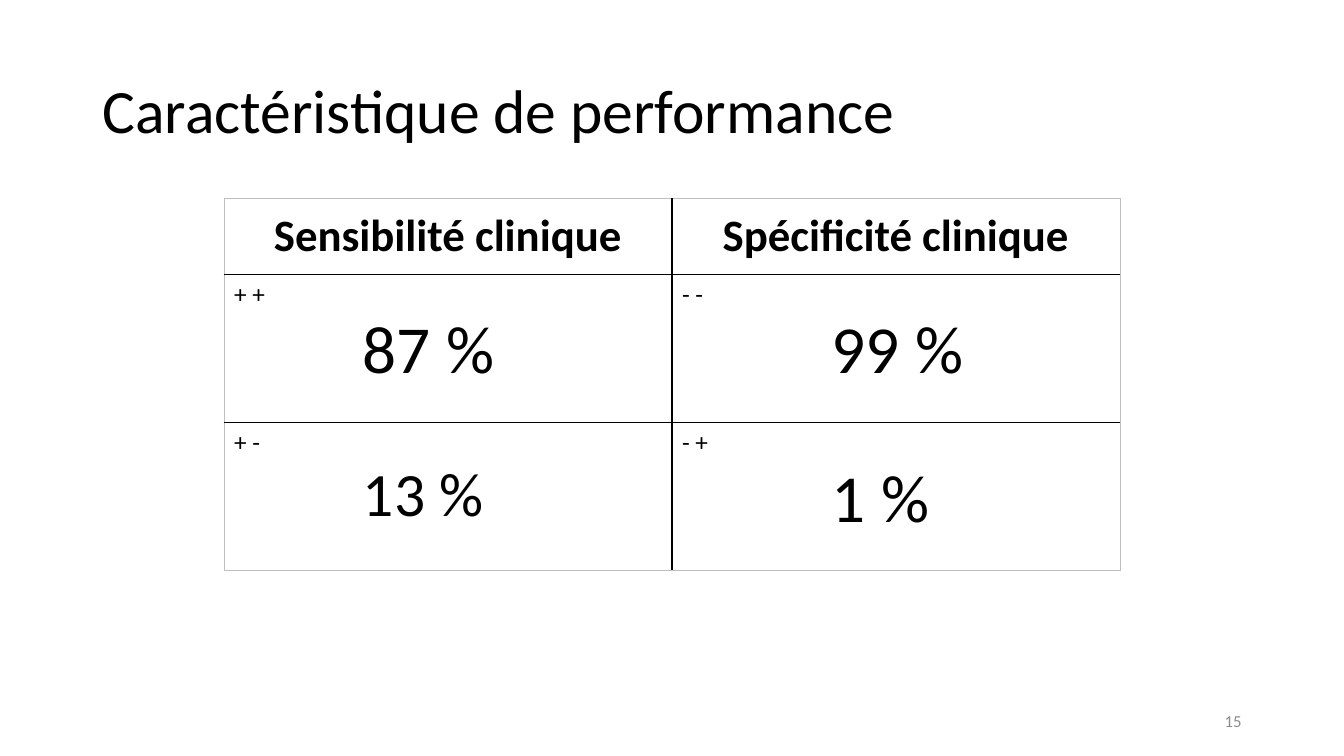
from lxml import etree
from pptx import Presentation
from pptx.dml.color import RGBColor
from pptx.enum.text import MSO_ANCHOR, PP_ALIGN
from pptx.oxml.ns import qn
from pptx.util import Pt

LEFT, CENTER, RIGHT = PP_ALIGN.LEFT, PP_ALIGN.CENTER, PP_ALIGN.RIGHT
TOP, MIDDLE = MSO_ANCHOR.TOP, MSO_ANCHOR.MIDDLE
TITLE_ONLY = 5
FONT = "Calibri"
COLORS = {"text": "000000", "grid": "000000", "frame": "BFBFBF",
          "number": "8C8C8C", "cell": "FFFFFF"}

HEADERS = ["Sensibilité clinique", "Spécificité clinique"]
# Each result: test signs, rate, rate size
RESULTS = [
    [("+ +", "87 %", 48), ("- -", "99 %", 48)],
    [("+ -", "13 %", 44), ("- +", "1 %", 48)],
]
RATE_INDENTS = [92, 107]
COL_WIDTH = 320
ROW_HEIGHTS = [54, 105.8, 105.8]


def format_paragraph(p, text, size, color="text", bold=False, align=LEFT):
    p.text = text
    p.alignment = align
    p.font.name = FONT
    p.font.size = Pt(size)
    p.font.bold = bold
    p.font.color.rgb = RGBColor.from_string(COLORS[color])


def indent(p, points):
    p._p.get_or_add_pPr().set("marL", str(Pt(points)))


def add_border(cell, side, color, width):
    ln = etree.SubElement(cell._tc.get_or_add_tcPr(), qn(f"a:ln{side}"), w=str(Pt(width)))
    fill = etree.SubElement(ln, qn("a:solidFill"))
    etree.SubElement(fill, qn("a:srgbClr"), val=COLORS[color])


def style_cell(cell, row, col, anchor):
    last_row, last_col = len(ROW_HEIGHTS) - 1, len(HEADERS) - 1
    edges = {"L": col == 0, "R": col == last_col, "T": row == 0, "B": row == last_row}
    for side, outer in edges.items():
        add_border(cell, side, *(("frame", 0.5) if outer else ("grid", 1)))
    cell.fill.solid()
    cell.fill.fore_color.rgb = RGBColor.from_string(COLORS["cell"])
    cell.vertical_anchor = anchor


def add_title(slide, text):
    sp = slide.shapes.title
    sp.left, sp.top, sp.width, sp.height = Pt(66), Pt(28.8), Pt(828), Pt(104.4)
    tf = sp.text_frame
    tf.vertical_anchor = MIDDLE
    p = tf.paragraphs[0]
    format_paragraph(p, text, 44)
    p.line_spacing = 0.9


def add_performance_table(slide):
    table = slide.shapes.add_table(
        len(ROW_HEIGHTS), len(HEADERS), Pt(160), Pt(141.8),
        Pt(COL_WIDTH * len(HEADERS)), Pt(sum(ROW_HEIGHTS))).table
    table.horz_banding = False
    for column in table.columns:
        column.width = Pt(COL_WIDTH)
    for row, height in zip(table.rows, ROW_HEIGHTS):
        row.height = Pt(height)

    # Header row
    for col, header in enumerate(HEADERS):
        cell = table.cell(0, col)
        style_cell(cell, 0, col, MIDDLE)
        format_paragraph(cell.text_frame.paragraphs[0], header, 32, bold=True, align=CENTER)

    # Result rows
    for row, results in enumerate(RESULTS, start=1):
        for col, (signs, rate, size) in enumerate(results):
            cell = table.cell(row, col)
            style_cell(cell, row, col, TOP)
            tf = cell.text_frame
            format_paragraph(tf.paragraphs[0], signs, 18)
            p = tf.add_paragraph()
            indent(p, RATE_INDENTS[col])
            format_paragraph(p, rate, size)


def add_slide_number(slide, number):
    tf = slide.shapes.add_textbox(Pt(678), Pt(500.5), Pt(216), Pt(28.8)).text_frame
    tf.word_wrap = True
    tf.vertical_anchor = MIDDLE
    format_paragraph(tf.paragraphs[0], number, 12, color="number", align=RIGHT)


def main():
    prs = Presentation()
    prs.slide_width, prs.slide_height = Pt(960), Pt(540)
    slide = prs.slides.add_slide(prs.slide_layouts[TITLE_ONLY])
    add_title(slide, "Caractéristique de performance")
    add_slide_number(slide, "15")
    add_performance_table(slide)
    prs.save("out.pptx")


if __name__ == "__main__":
    main()
